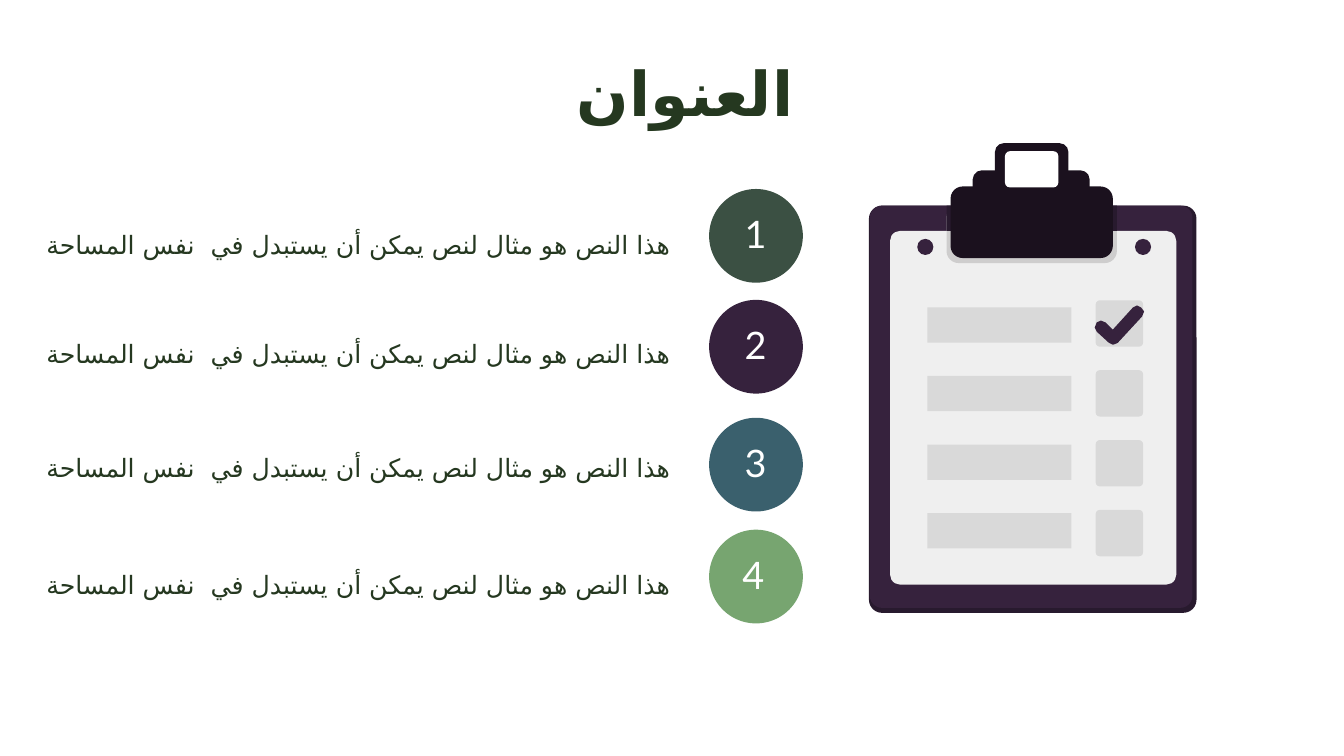
"""Build an Arabic four-point list slide beside a clipboard checklist."""
from pptx import Presentation
from pptx.dml.color import RGBColor
from pptx.enum.shapes import MSO_SHAPE as Preset
from pptx.enum.text import MSO_ANCHOR as Anchor, MSO_AUTO_SIZE as AutoSize, PP_ALIGN as Align
from pptx.oxml.ns import qn
from pptx.util import Inches, Pt
from lxml.etree import SubElement

WHITE = RGBColor(0xFF, 0xFF, 0xFF)
INK = RGBColor(0x25, 0x38, 0x20)
FOREST = RGBColor(0x3B, 0x50, 0x43)
PLUM = RGBColor(0x36, 0x22, 0x3D)
TEAL = RGBColor(0x3A, 0x60, 0x6D)
LEAF = RGBColor(0x77, 0xA5, 0x70)
PLUM_SHADE = RGBColor(0x28, 0x1A, 0x2E)
CLIP = RGBColor(0x1B, 0x11, 0x1E)
PAPER = RGBColor(0xEF, 0xEF, 0xEF)
CLIP_SHADE = RGBColor(0xCE, 0xCD, 0xCD)
GREY = RGBColor(0xD9, 0xD9, 0xD9)
FONT = "Lato"
ARABIC_FONT = "DejaVu Sans"
CELL = Inches(0.1)
COLUMNS, ROWS = 133.33, 75

presentation = Presentation()
presentation.slide_width = int(COLUMNS * CELL)
presentation.slide_height = ROWS * CELL
slide = presentation.slides.add_slide(presentation.slide_layouts[6])


def add_block(preset, color, cells, radius=0):
    """Draw a filled preset shape; cells are column, row, width and height."""
    shape = slide.shapes.add_shape(preset, *[int(cell * CELL) for cell in cells])
    shape.shadow.inherit = False
    shape.fill.solid()
    shape.fill.fore_color.rgb = color
    shape.line.fill.background()
    if radius:
        shape.adjustments[0] = radius / min(cells[2:])


def add_label(text, cells, font, frame, paragraph_format, rtl=False):
    """Write one line of text with the given format values."""
    box = slide.shapes.add_textbox(*[int(cell * CELL) for cell in cells])
    text_frame = box.text_frame
    text_frame.word_wrap = True
    paragraph = text_frame.paragraphs[0]
    run = paragraph.add_run()
    run.text = text
    run.font.color.rgb = INK if rtl else WHITE
    font = {"name": FONT, **font}
    for target, values in ((text_frame, frame), (paragraph, paragraph_format), (run.font, font)):
        for name, value in values.items():
            setattr(target, name, value)
    if rtl:
        paragraph._p.get_or_add_pPr().set("rtl", "1")
        SubElement(run._r.get_or_add_rPr(), qn("a:cs")).set("typeface", ARABIC_FONT)


NO_MARGIN = {f"margin_{side}": 0 for side in ("left", "top", "right", "bottom")}
GROW = {"auto_size": AutoSize.SHAPE_TO_FIT_TEXT}
POINT = "هذا النص هو مثال لنص يمكن أن يستبدل في  نفس المساحة"

points = [(FOREST, 18.7, 71.3, 20.8), (PLUM, 29.7, 71.3, 31.6),
          (TEAL, 41.4, 71.3, 42.9), (LEAF, 52.5, 71.1, 54.5)]
for number, (color, circle_row, number_column, text_row) in enumerate(points, 1):
    add_block(Preset.OVAL, color, (70.35, circle_row + 0.05, 9.3, 9.3))
    add_label(str(number), (number_column, circle_row + 2.2, 7.3, 5.5), {"size": Pt(27)},
              NO_MARGIN, {"alignment": Align.CENTER})
    add_label(POINT, (-12.6, text_row, 80.1, 5.2), {"size": Pt(18)},
              GROW, {"alignment": Align.RIGHT, "line_spacing": 1.5}, rtl=True)

add_label("العنوان", (7.8, 4.9, 71.9, 8.4), {"size": Pt(44), "bold": True},
          {**GROW, "vertical_anchor": Anchor.BOTTOM}, {"alignment": Align.RIGHT}, rtl=True)

clipboard = [
    (PLUM_SHADE, (86.2, 20.4, 32.5, 40.4), 1.3),
    (PLUM, (86.3, 20.4, 32, 39.9), 1.2),
    (PAPER, (88.3, 22.9, 28.4, 35.1), 1),
    (CLIP_SHADE, (93.9, 20.4, 16.9, 5.7), 1.2),
    (PLUM_SHADE, (93.9, 20.4, 16.9, 2.5), 0),
    (CLIP, (98.7, 14.2, 7.3, 6), 0.9),
    (CLIP, (96.5, 16.9, 11.6, 4), 0.9),
    (CLIP, (94.3, 18.5, 16.1, 7.1), 1.2),
    (WHITE, (99.7, 15, 5.3, 3.6), 0.5),
]
for color, cells, radius in clipboard:
    add_block(Preset.ROUNDED_RECTANGLE if radius else Preset.RECTANGLE, color, cells, radius)

for rivet_column in (91, 112.6):
    add_block(Preset.OVAL, PLUM, (rivet_column, 23.7, 1.6, 1.6))

for item in range(4):
    add_block(Preset.ROUNDED_RECTANGLE, GREY, (108.7, 29.8 + 6.93 * item, 4.7, 4.6), 0.4)
    add_block(Preset.RECTANGLE, GREY, (92, 30.5 + 6.8 * item, 14.3, 3.5))

tick_points = [
    (1104, 342), (1100, 340), (1088, 329), (1086, 325), (1088, 320), (1092, 318),
    (1097, 320), (1104, 327), (1124, 305), (1128, 303), (1132, 305), (1135, 309),
    (1133, 314), (1109, 340), (1107, 341),
]
builder = slide.shapes.build_freeform(*tick_points[0], scale=CELL / 10)
builder.add_line_segments(tick_points[1:], close=True)
tick = builder.convert_to_shape()
tick.shadow.inherit = False
tick.fill.solid()
tick.fill.fore_color.rgb = PLUM
tick.line.fill.background()

presentation.save("out.pptx")
